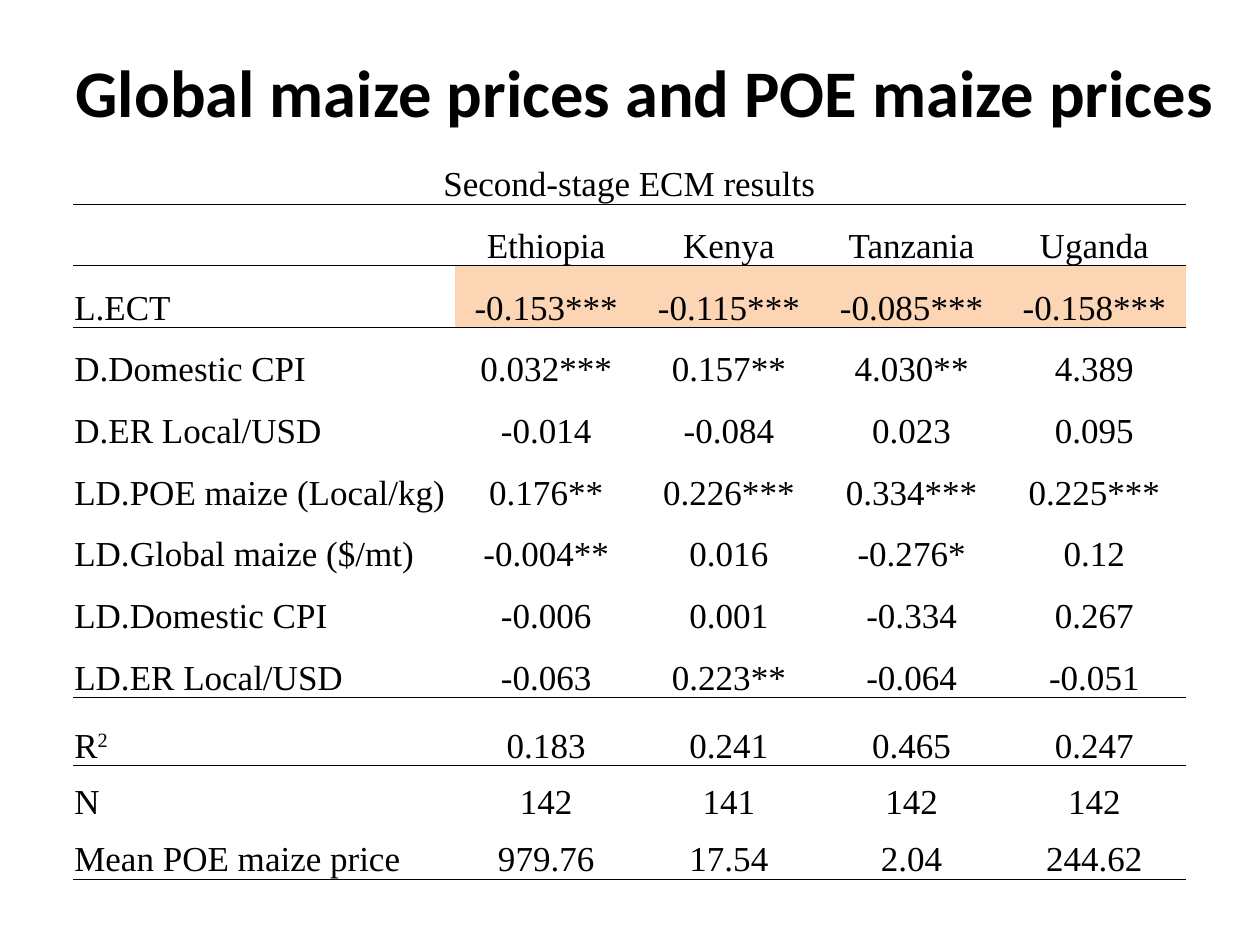
from lxml.etree import SubElement
from pptx import Presentation
from pptx.dml.color import RGBColor
from pptx.enum.text import MSO_ANCHOR, PP_ALIGN
from pptx.oxml.ns import qn
from pptx.util import Inches, Pt

BLACK, PEACH = "000000", "FCD5B5"
NO_STYLE = "{2D5ABB26-0587-4C30-8999-92F81FD0307C}"


def write(para, text, size=20, font="Times New Roman", color=BLACK,
          bold=False, align=PP_ALIGN.LEFT, baseline=0):
    para.alignment = align
    span = para.add_run()
    span.text = text
    span.font.size = Pt(size)
    span.font.name = font
    span.font.bold = bold
    span.font.color.rgb = RGBColor.from_string(color)
    if baseline:
        span.font._element.set("baseline", str(baseline * 1000))


def rule(cell, side, color=BLACK, width=0.5):
    line = SubElement(cell._tc.get_or_add_tcPr(), qn(f"a:{side}"), w=str(Pt(width)))
    SubElement(SubElement(line, qn("a:solidFill")), qn("a:srgbClr"), val=color)


deck = Presentation()
deck.slide_width, deck.slide_height = Inches(10), Inches(7.5)
page = deck.slides.add_slide(deck.slide_layouts[5])

# Title
title = page.shapes.title
title.left, title.top, title.width, title.height = map(Inches, (0.5, 0, 9.33, 1.45))
title.text_frame.vertical_anchor = MSO_ANCHOR.MIDDLE
title.text_frame.word_wrap = True
write(title.text_frame.paragraphs[0], "Global maize prices and POE maize prices",
      size=38, font="Calibri", bold=True)

# Table content
results = [
    ("Second-stage ECM results", "", "", "", ""),
    ("", "Ethiopia", "Kenya", "Tanzania", "Uganda"),
    ("L.ECT", "-0.153***", "-0.115***", "-0.085***", "-0.158***"),
    ("D.Domestic CPI", "0.032***", "0.157**", "4.030**", "4.389"),
    ("D.ER Local/USD", "-0.014", "-0.084", "0.023", "0.095"),
    ("LD.POE maize (Local/kg)", "0.176**", "0.226***", "0.334***", "0.225***"),
    ("LD.Global maize ($/mt)", "-0.004**", "0.016", "-0.276*", "0.12"),
    ("LD.Domestic CPI", "-0.006", "0.001", "-0.334", "0.267"),
    ("LD.ER Local/USD", "-0.063", "0.223**", "-0.064", "-0.051"),
    ("R", "0.183", "0.241", "0.465", "0.247"),
    ("N", "142", "141", "142", "142"),
    ("Mean POE maize price", "979.76", "17.54", "2.04", "244.62"),
]
column_widths = [3.03] + [1.45] * 4
row_heights = [0.45] + [0.49] * 8 + [0.54, 0.45, 0.45]
ruled_rows = {0, 1, 8, 11}  # rows with a line below
highlighted_row = 2

# Table grid
frame = page.shapes.add_table(
    len(results), len(column_widths), Inches(0.58), Inches(1.17),
    Inches(sum(column_widths)), Inches(sum(row_heights)))
table = frame.table
table.first_row = table.horz_banding = False
table._tbl.tblPr.find(qn("a:tableStyleId")).text = NO_STYLE
for column, width in zip(table.columns, column_widths):
    column.width = Inches(width)
for row, height in zip(table.rows, row_heights):
    row.height = Inches(height)
table.cell(0, 0).merge(table.cell(0, len(column_widths) - 1))

# Cells
for r, values in enumerate(results):
    for c, value in enumerate(values):
        cell = table.cell(r, c)
        cell.vertical_anchor = MSO_ANCHOR.BOTTOM
        cell.margin_left = cell.margin_right = cell.margin_top = Inches(0.01)
        cell.margin_bottom = 0
        if r - 1 in ruled_rows:
            rule(cell, "lnT")
        if r in ruled_rows:
            rule(cell, "lnB")
        if r == highlighted_row and c > 0:
            cell.fill.solid()
            cell.fill.fore_color.rgb = RGBColor.from_string(PEACH)
        else:
            cell.fill.background()
        para = cell.text_frame.paragraphs[0]
        if value:
            centred = r == 0 or c > 0
            write(para, value, align=PP_ALIGN.CENTER if centred else PP_ALIGN.LEFT)
        if value == "R":
            write(para, "2", baseline=30)

deck.save("out.pptx")
